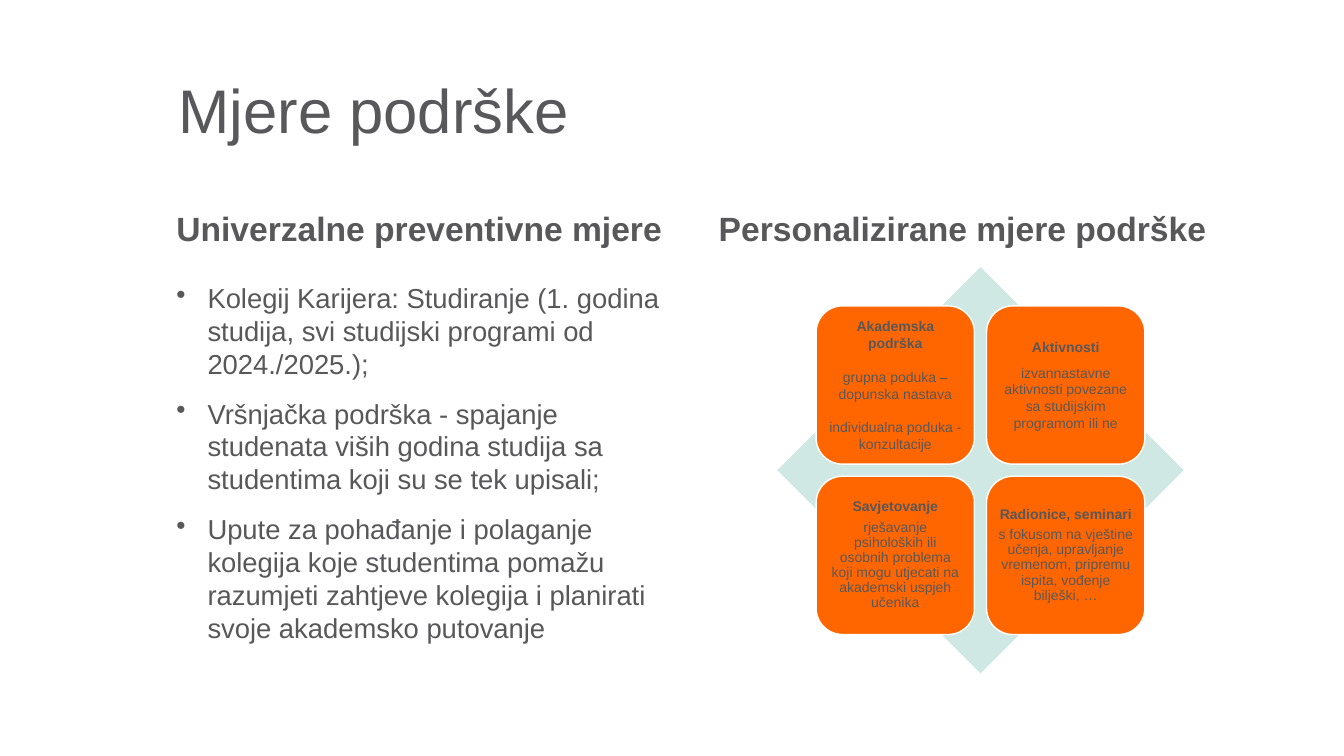
from pptx import Presentation
from pptx.dml.color import RGBColor
from pptx.enum.shapes import MSO_SHAPE
from pptx.enum.text import MSO_ANCHOR, PP_ALIGN
from pptx.oxml import parse_xml
from pptx.oxml.ns import nsdecls
from pptx.util import Pt

PX = 9144  # 100 px to the inch
GREY = RGBColor(0x58, 0x58, 0x5A)
ORANGE = RGBColor(0xFF, 0x66, 0x00)
MINT = RGBColor(0xD0, 0xE8, 0xE3)
WHITE = RGBColor(0xFF, 0xFF, 0xFF)
FONT = "Arial"
DIAMOND, ROUND = MSO_SHAPE.DIAMOND, MSO_SHAPE.ROUNDED_RECTANGLE
TOP, MIDDLE = MSO_ANCHOR.TOP, MSO_ANCHOR.MIDDLE
CENTER = PP_ALIGN.CENTER

TITLE = "Mjere podrške"
LEFT_HEAD = "Univerzalne preventivne mjere"
RIGHT_HEAD = "Personalizirane mjere podrške"
STEPS = [
    "Kolegij Karijera: Studiranje (1. godina studija, svi studijski programi "
    "od 2024./2025.);",
    "Vršnjačka podrška - spajanje studenata viših godina studija sa "
    "studentima koji su se tek upisali;",
    "Upute za pohađanje i polaganje kolegija koje studentima pomažu "
    "razumjeti zahtjeve kolegija i planirati svoje akademsko putovanje",
]
# Each card: line spacing, space after, heading and details
CARDS = [
    (1.0, 12, ["Akademska podrška", "grupna poduka – dopunska nastava",
               "individualna poduka - konzultacije"]),
    (1.0, 6, ["Aktivnosti", "izvannastavne aktivnosti povezane sa studijskim "
              "programom ili ne"]),
    (0.9, 3.5, ["Savjetovanje", "rješavanje psiholoških ili osobnih problema "
                "koji mogu utjecati na akademski uspjeh učenika"]),
    (0.9, 3.5, ["Radionice, seminari", "s fokusom na vještine učenja, "
                "upravljanje vremenom, pripremu ispita, vođenje bilješki, …"]),
]


def emu(*vals):
    return [round(v * PX) for v in vals]


def style(item, form):
    for key, val in form.items():
        setattr(item, key, val)


def write(para, text, size, bold=False, **form):
    style(para, form)
    run = para.add_run()
    run.text = text
    style(run.font, {"name": FONT, "size": Pt(size), "bold": bold})
    run.font.color.rgb = GREY


def frame(slide, box, anchor):
    body = slide.shapes.add_textbox(*emu(*box)).text_frame
    style(body, {"word_wrap": True, "vertical_anchor": anchor})
    return body


def heading(slide, box, text, size, bold):
    body = frame(slide, box, MIDDLE)
    write(body.paragraphs[0], text, size, bold, line_spacing=0.9)


def bullets(slide, box, items):
    body = frame(slide, box, TOP)
    for i, text in enumerate(items):
        para = body.add_paragraph() if i else body.paragraphs[0]
        props = para._p.get_or_add_pPr()
        props.set("marL", str(31 * PX))
        props.set("indent", str(-31 * PX))
        props.append(parse_xml(f'<a:buChar {nsdecls("a")} char="•"/>'))
        write(para, text, 19.6, space_before=Pt(6 if i else 0),
              space_after=Pt(6))


def solid(slide, kind, box, color):
    shape = slide.shapes.add_shape(kind, *emu(*box))
    shape.shadow.inherit = False
    shape.fill.solid()
    shape.fill.fore_color.rgb = color
    return shape


def card(slide, box, lead, after, texts):
    shape = solid(slide, ROUND, box, ORANGE)
    shape.line.color.rgb = WHITE
    shape.line.width = Pt(1)
    body = shape.text_frame
    style(body, {"word_wrap": True, "vertical_anchor": MIDDLE})
    style(body, {f"margin_{side}": 4 * PX
                 for side in ("left", "top", "right", "bottom")})
    for i, text in enumerate(texts):
        para = body.add_paragraph() if i else body.paragraphs[0]
        write(para, text, 10, i == 0, alignment=CENTER, line_spacing=lead,
              space_after=Pt(after))


def matrix(slide, box, cards):
    left, top, width, _ = box
    size, gap = 157, 12
    edge = (width - 2 * size - gap) / 2
    solid(slide, DIAMOND, box, MINT).line.fill.background()
    for i, (lead, after, texts) in enumerate(cards):
        row, col = divmod(i, 2)
        spot = (left + edge + col * (size + gap),
                top + edge + row * (size + gap), size, size)
        card(slide, spot, lead, after, texts)


def main():
    deck = Presentation()
    deck.slide_width, deck.slide_height = emu(1333, 750)
    slide = deck.slides.add_slide(deck.slide_layouts[6])
    # Title
    heading(slide, (167, 40, 1075, 145), TITLE, 44, False)
    # Left column
    heading(slide, (165, 184, 511, 90), LEFT_HEAD, 24, True)
    bullets(slide, (165, 274, 511, 403), STEPS)
    # Right column
    heading(slide, (703, 184, 539, 90), RIGHT_HEAD, 24, True)
    matrix(slide, (771, 265, 403, 403), CARDS)
    deck.save("out.pptx")


if __name__ == "__main__":
    main()
